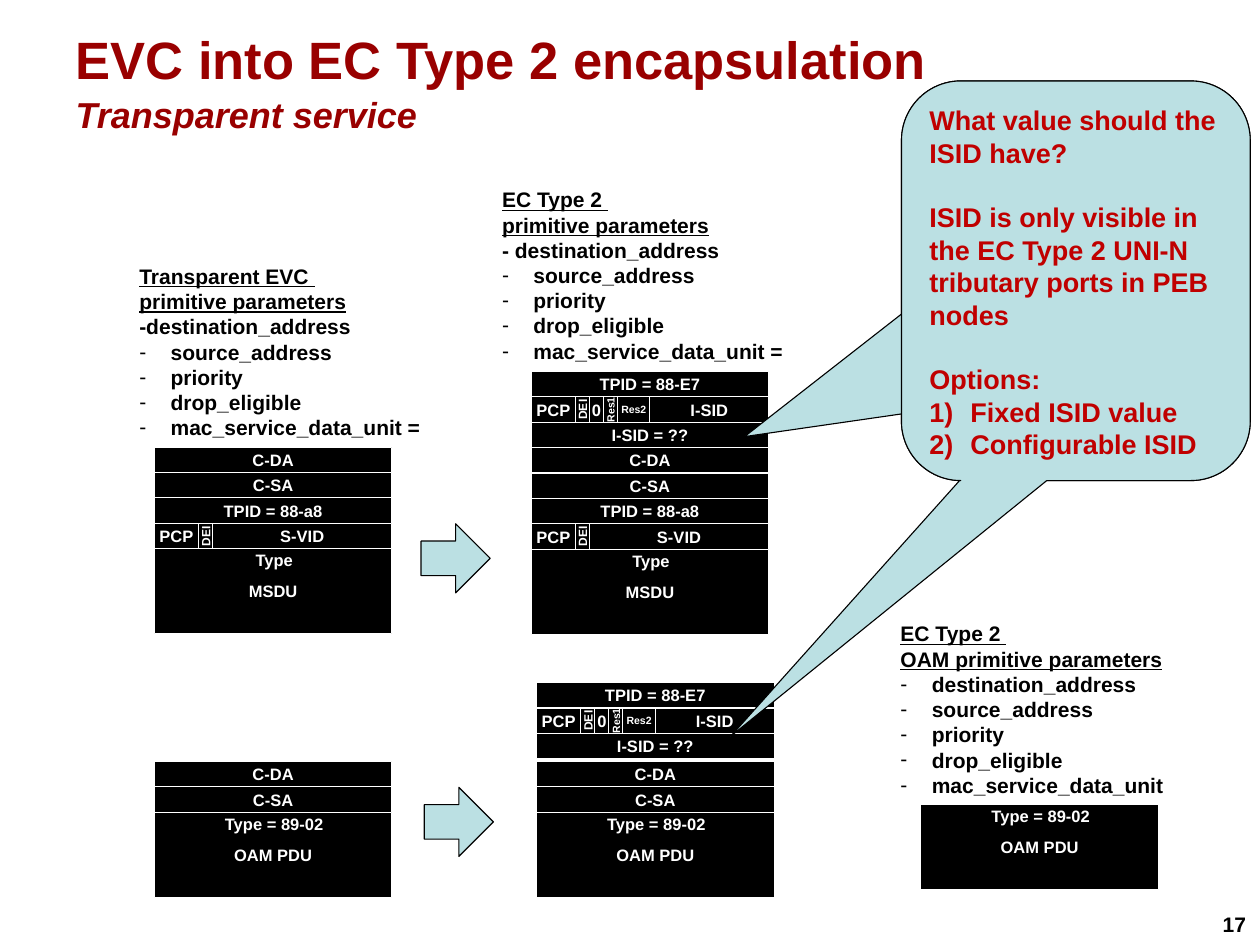
from pptx import Presentation
from pptx.dml.color import RGBColor
from pptx.enum.shapes import MSO_SHAPE
from pptx.enum.text import MSO_ANCHOR, PP_ALIGN
from pptx.util import Inches, Pt
from lxml.etree import SubElement

NS = "{http://schemas.openxmlformats.org/drawingml/2006/main}"
ROW, WIDE, BODY = 0.235, 2.2, 0.79
LEFT, MID, RIGHT = 1.43, 4.92, 8.53
BLACK, WHITE, PALE = "000000", "FFFFFF", "BBE0E3"


def hue(code):
    return RGBColor.from_string(code)


def write(shape, lines, size=11, color=BLACK, align=PP_ALIGN.LEFT,
          anchor=MSO_ANCHOR.TOP, pad=(0.1, 0.05), wrap=True, pitch=None,
          under=0, mark=None, start=99, hang=0.29, gaps=(), turn=False):
    frame = shape.text_frame
    frame.word_wrap = wrap
    frame.vertical_anchor = anchor
    frame.margin_left = frame.margin_right = Inches(pad[0])
    frame.margin_top = frame.margin_bottom = Inches(pad[1])
    if turn:
        frame._txBody.bodyPr.set("vert", "vert270")
    for i, line in enumerate(lines):
        para = frame.paragraphs[0] if i == 0 else frame.add_paragraph()
        para.alignment = align
        if pitch:
            para.line_spacing = Pt(pitch)
        if i in gaps:
            para.space_before = Pt(pitch)
        if i >= start:
            props = para._p.get_or_add_pPr()
            props.set("marL", str(Inches(hang)))
            props.set("indent", str(-Inches(hang)))
            SubElement(props, NS + "buFont", typeface="Arial")
            if mark == "-":
                SubElement(props, NS + "buChar", char=mark)
            else:
                SubElement(props, NS + "buAutoNum", type=mark)
        run = para.add_run()
        run.text = line
        font = run.font
        font.name, font.size, font.bold = "Arial", Pt(size), True
        font.color.rgb = hue(color)
        if i < under:
            font.underline = True


deck = Presentation()
deck.slide_width, deck.slide_height = Inches(11.67), Inches(8.75)
slide = deck.slides.add_slide(deck.slide_layouts[5])
shapes = slide.shapes

# Title and subtitle
title = shapes.title
title.left, title.top = Inches(0.58), Inches(0.17)
title.width, title.height = Inches(10.5), Inches(1.11)
write(title, ["EVC into EC Type 2 encapsulation", "Transparent service"],
      size=35, color="990000", pad=(0.12, 0.06))
for para in title.text_frame.paragraphs:
    para.line_spacing = 1.04
    para.space_before = Pt(0)
sub = title.text_frame.paragraphs[1].runs[0].font
sub.size, sub.italic = Pt(24), True

# Page number
page = shapes.add_textbox(Inches(11.2), Inches(8.39), Inches(0.44), Inches(0.34))
write(page, ["17"], size=14, align=PP_ALIGN.RIGHT, wrap=False)

# Frame rows: each cell is text, width, size, turned
head = [
    [("TPID = 88-E7", WIDE, 11, False)],
    [("PCP", 0.41, 11, False), ("DEI", 0.13, 8, True), ("0", 0.13, 11, False),
     ("Res1", 0.13, 7, True), ("Res2", 0.3, 7, False), ("I-SID", 1.1, 11, False)],
    [("I-SID = ??", WIDE, 11, False)],
]
macs = [[("C-DA", WIDE, 11, False)], [("C-SA", WIDE, 11, False)]]
tags = [
    [("TPID = 88-a8", WIDE, 11, False)],
    [("PCP", 0.41, 11, False), ("DEI", 0.13, 8, True), ("S-VID", 1.66, 11, False)],
]
data = ("Type", "MSDU")
oam = ("Type = 89-02", "OAM PDU")

# Frame stacks: left, top, rows, body
stacks = [
    (LEFT, 4.14, macs + tags, data),
    (MID, 3.44, head + macs + tags, data),
    (LEFT, 7.05, macs, oam),
    (MID + 0.05, 6.32, head, None),
    (MID + 0.05, 7.05, macs, oam),
    (RIGHT, 7.45, [], oam),
]
for left, top, rows, body in stacks:
    cells = []
    for i, row in enumerate(rows):
        x = left
        for text, width, size, turn in row:
            cells.append((text, x, top + i * ROW, width, ROW, size, turn))
            x += width
    base = top + len(rows) * ROW
    if body:
        cells.append((body[1], left, base, WIDE, BODY, 11, False))
    for text, x, y, width, high, size, turn in cells:
        cell = shapes.add_shape(MSO_SHAPE.RECTANGLE, Inches(x), Inches(y),
                                Inches(width), Inches(high))
        cell.shadow.inherit = False
        cell.fill.solid()
        cell.fill.fore_color.rgb = hue(BLACK)
        cell.line.color.rgb = hue(WHITE)
        cell.line.width = Pt(0.75)
        write(cell, [text], size=size, color=WHITE, align=PP_ALIGN.CENTER,
              anchor=MSO_ANCHOR.MIDDLE, pad=(0, 0), wrap=False, turn=turn)
    if body:
        label = shapes.add_textbox(Inches(left + 0.01), Inches(base - 0.01),
                                   Inches(WIDE), Inches(ROW))
        write(label, [body[0]], color=WHITE, align=PP_ALIGN.CENTER,
              anchor=MSO_ANCHOR.MIDDLE, pad=(0, 0))

# Arrows and callouts: kind, left, top, width, height, adjustments
ask = MSO_SHAPE.ROUNDED_RECTANGULAR_CALLOUT
pale = [
    (MSO_SHAPE.RIGHT_ARROW, 3.9, 4.85, 0.64, 0.64, ()),
    (MSO_SHAPE.RIGHT_ARROW, 3.93, 7.29, 0.64, 0.64, ()),
    (ask, 8.35, 0.75, 3.23, 3.7, (-0.95, 0.39, 0.17)),
    (ask, 8.35, 0.75, 3.23, 3.7, (-0.99, 1.14, 0.17)),
]
for kind, x, y, width, high, bends in pale:
    mark = shapes.add_shape(kind, Inches(x), Inches(y), Inches(width), Inches(high))
    mark.shadow.inherit = False
    mark.fill.solid()
    mark.fill.fore_color.rgb = hue(PALE)
    mark.line.color.rgb = hue(BLACK)
    mark.line.width = Pt(0.75)
    for i, bend in enumerate(bends):
        mark.adjustments[i] = bend

# Question in the front callout
write(mark, ["What value should the ISID have?",
             "ISID is only visible in the EC Type 2 UNI-N tributary ports in PEB nodes",
             "Options:", "Fixed ISID value", "Configurable ISID"],
      size=18, color="C00000", pitch=21.6, gaps=(1, 2),
      mark="arabicParenR", start=3, hang=0.38)

# Parameter lists: left, top, width, lines, first bullet
names = ["source_address", "priority", "drop_eligible"]
unit = "mac_service_data_unit"
lists = [
    (1.2, 2.4, 2.94, ["Transparent EVC ", "primitive parameters",
                      "-destination_address", *names, unit + " ="], 3),
    (4.56, 1.69, 3.03, ["EC Type 2 ", "primitive parameters",
                        "- destination_address", *names, unit + " ="], 3),
    (8.25, 5.71, 2.94, ["EC Type 2 ", "OAM primitive parameters",
                        "destination_address", *names, unit], 2),
]
for x, y, width, lines, start in lists:
    box = shapes.add_textbox(Inches(x), Inches(y), Inches(width), Inches(1.74))
    write(box, lines, size=14, pad=(0.09, 0.04), pitch=16.8,
          under=2, mark="-", start=start)

deck.save("out.pptx")
